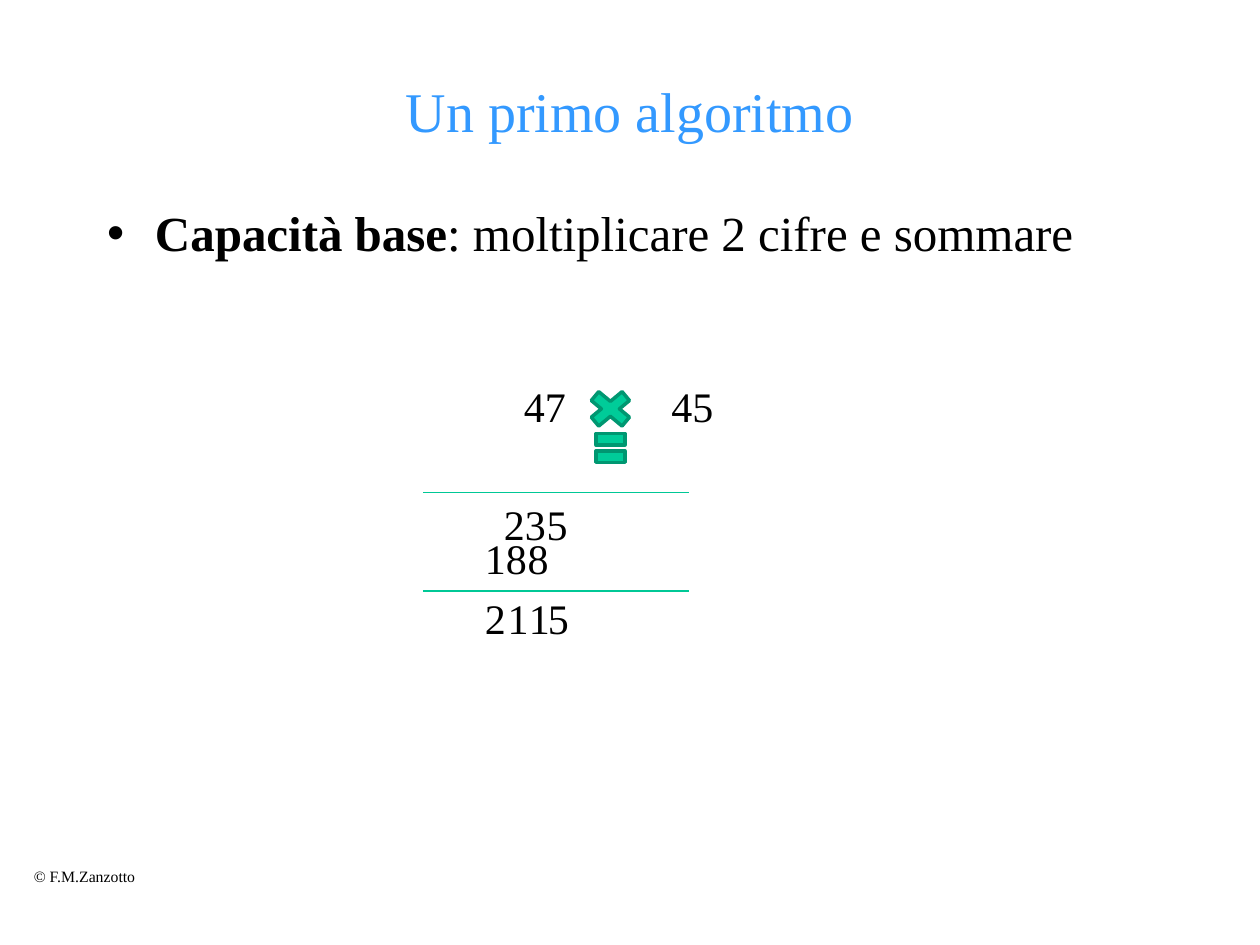
from typing import NamedTuple

from lxml import etree
from pptx import Presentation
from pptx.dml.color import RGBColor
from pptx.enum.shapes import MSO_CONNECTOR, MSO_SHAPE
from pptx.enum.text import MSO_ANCHOR, MSO_AUTO_SIZE, PP_ALIGN
from pptx.oxml.ns import qn
from pptx.util import Inches, Pt

BLACK = RGBColor(0x00, 0x00, 0x00)
BLUE = RGBColor(0x33, 0x99, 0xFF)
GREEN = RGBColor(0x00, 0xCC, 0x99)
RULE = RGBColor(0x00, 0xC8, 0x96)
EDGE = RGBColor(0x00, 0x97, 0x71)
FONT = "Times New Roman"
STRAIGHT = MSO_CONNECTOR.STRAIGHT
EQUAL, TIMES = MSO_SHAPE.MATH_EQUAL, MSO_SHAPE.MATH_MULTIPLY
MIDDLE, TOP = MSO_ANCHOR.MIDDLE, MSO_ANCHOR.TOP
CENTER, LEFT = PP_ALIGN.CENTER, PP_ALIGN.LEFT
FIXED, GROW = MSO_AUTO_SIZE.NONE, MSO_AUTO_SIZE.SHAPE_TO_FIT_TEXT


class Label(NamedTuple):
    text: str
    left: float
    top: float
    width: float
    height: float = 0.5
    size: int = 24


class Sign(NamedTuple):
    kind: MSO_SHAPE
    left: float
    top: float
    width: float
    height: float = 0.39


ONE, TWO = 0.37, 0.54  # box widths for one and two digits
LABELS = [
    Label("© F.M.Zanzotto", 0.17, 6.83, 1.02, 0.25, 9),
    # Factors
    Label("47", 4.06, 2.97, TWO),
    Label("45", 5.23, 2.97, TWO),
    # Partial products
    Label("5", 4.24, 3.91, ONE),
    Label("23", 3.9, 3.91, TWO),
    Label("8", 4.09, 4.18, ONE),
    Label("18", 3.75, 4.18, TWO),
    # Result, digit by digit
    Label("5", 4.25, 4.65, ONE),
    Label("1", 4.1, 4.65, ONE),
    Label("1", 3.93, 4.65, ONE),
    Label("2", 3.75, 4.65, ONE),
]
SIGNS = [Sign(EQUAL, 4.69, 3.36, 0.31), Sign(TIMES, 4.61, 3.05, 0.47)]
RULES = [3.91, 4.69]


def add_run(para, text: str, size: int, color=BLACK, bold=False) -> None:
    run = para.add_run()
    run.text = text
    font = run.font
    font.name, font.size, font.bold = FONT, Pt(size), bold
    font.color.rgb = color


def place(shape, left: float, top: float, width: float, height: float) -> None:
    shape.left, shape.top = Inches(left), Inches(top)
    shape.width, shape.height = Inches(width), Inches(height)


def add_label(slide, label: Label) -> None:
    box = slide.shapes.add_textbox(
        Inches(label.left), Inches(label.top),
        Inches(label.width), Inches(label.height))
    frame = box.text_frame
    frame.word_wrap = False
    frame.auto_size = GROW
    add_run(frame.paragraphs[0], label.text, label.size)


def add_sign(slide, sign: Sign) -> None:
    shape = slide.shapes.add_shape(
        sign.kind, Inches(sign.left), Inches(sign.top),
        Inches(sign.width), Inches(sign.height))
    shape.shadow.inherit = False
    shape.fill.solid()
    shape.fill.fore_color.rgb = GREEN
    shape.line.color.rgb = EDGE
    shape.line.width = Pt(2)


def add_rule(slide, top: float) -> None:
    line = slide.shapes.add_connector(
        STRAIGHT, Inches(3.36), Inches(top), Inches(5.47), Inches(top))
    line.line.color.rgb = RULE
    line.line.width = Pt(0.75)
    etree.SubElement(line._element.spPr, qn("a:effectLst"))


def fill_title(title) -> None:
    place(title, 0.75, 0.5, 8.5, 0.75)
    frame = title.text_frame
    frame.auto_size = FIXED
    frame.vertical_anchor = MIDDLE
    para = frame.paragraphs[0]
    para.alignment = CENTER
    add_run(para, "Un primo algoritmo", 32, BLUE)


def fill_body(body) -> None:
    place(body, 0.75, 1.5, 8.5, 0.77)
    frame = body.text_frame
    frame.auto_size = FIXED
    frame.vertical_anchor = TOP
    frame.margin_top = Inches(0.11)
    para = frame.paragraphs[0]
    props = para._p.get_or_add_pPr()
    props.set("marL", str(Inches(0.38)))
    props.set("indent", str(-Inches(0.38)))
    etree.SubElement(props, qn("a:buChar"), char="•")
    para.alignment = LEFT
    para.space_before = Pt(0)
    add_run(para, "Capacità base", 28, bold=True)
    add_run(para, ": moltiplicare 2 cifre e sommare", 28)


def main() -> None:
    deck = Presentation()
    deck.slide_width, deck.slide_height = Inches(10), Inches(7.5)
    slide = deck.slides.add_slide(deck.slide_layouts[1])

    # Title and list
    fill_title(slide.shapes.title)
    fill_body(slide.placeholders[1])

    # Long multiplication
    for top in RULES:
        add_rule(slide, top)
    for sign in SIGNS:
        add_sign(slide, sign)
    for label in LABELS:
        add_label(slide, label)

    deck.save("out.pptx")


if __name__ == "__main__":
    main()
